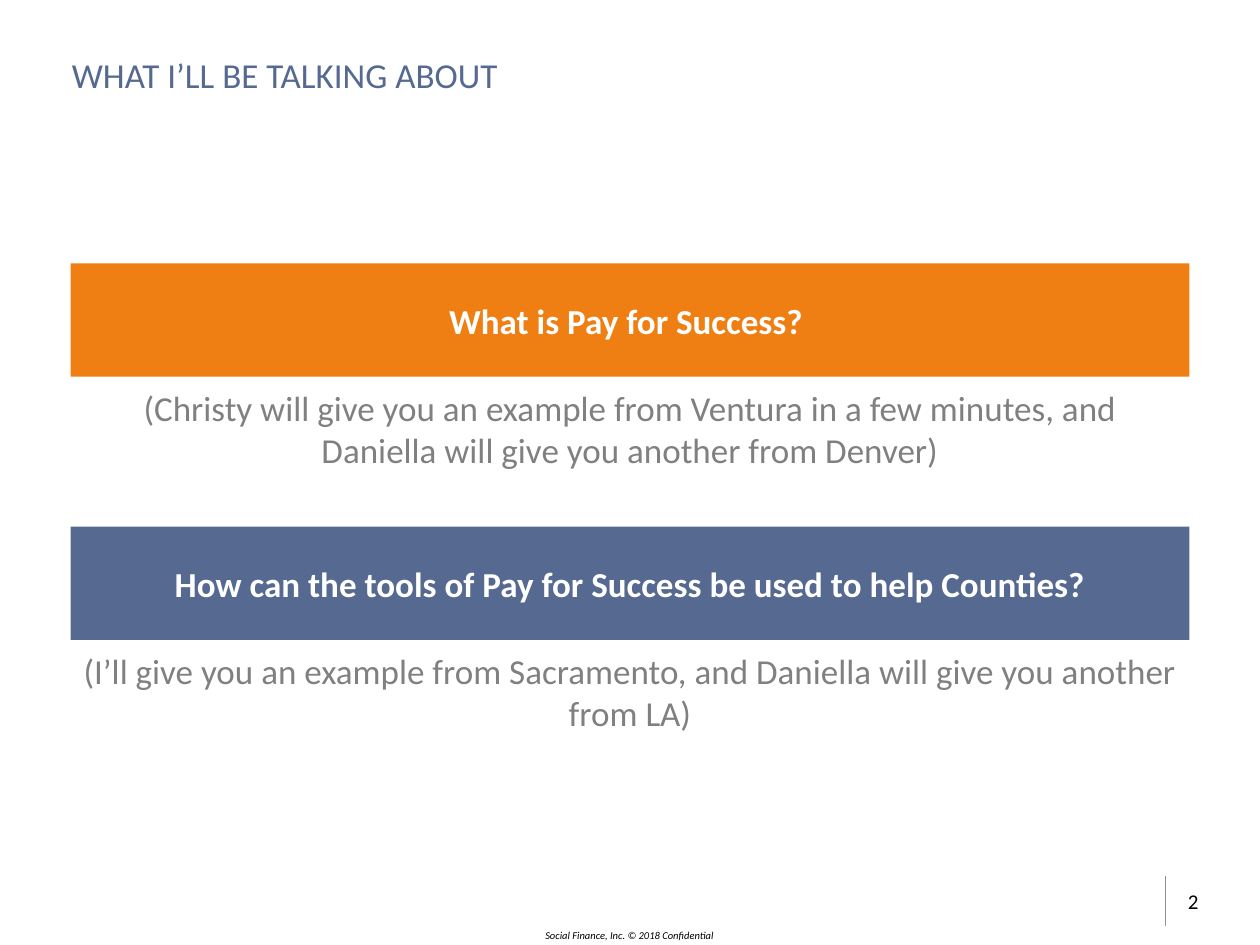
"""Build the agenda slide with two topic bars and their notes."""
from dataclasses import dataclass

import pptx
import pptx.dml.color
import pptx.enum.shapes
import pptx.enum.text
import pptx.oxml.ns
import pptx.util
from lxml import etree
from pptx.util import Inches

ALIGN = pptx.enum.text.PP_ALIGN
ANCHOR = pptx.enum.text.MSO_ANCHOR
BLUE = "556991"
ORANGE = "F07F13"
WHITE = "FFFFFF"
GRAY = "808080"
BLACK = "000000"
RULE_GRAY = "9B8F8B"

LEFT, WIDTH, HEIGHT = 0.56, 8.88, 0.9
FIRST_TOP, TOPIC_STEP, NOTE_OFFSET = 2.09, 2.09, 0.86


@dataclass
class Topic:
    heading: str
    note: str
    fill: str


@dataclass
class Style:
    size: float
    color: str
    align: ALIGN = ALIGN.CENTER
    anchor: ANCHOR = ANCHOR.MIDDLE
    bold: bool = False
    italic: bool = False
    insets: tuple = (0.1, 0.05, 0.1, 0.05)


TOPICS = [
    Topic(
        "What is Pay for Success? ",
        "(Christy will give you an example from Ventura in a few minutes, "
        "and Daniella will give you another from Denver)",
        ORANGE,
    ),
    Topic(
        "How can the tools of Pay for Success be used to help Counties?",
        "(I’ll give you an example from Sacramento, "
        "and Daniella will give you another from LA)",
        BLUE,
    ),
]

NO_INSETS = (0, 0, 0, 0)
TITLE = Style(20, BLUE, ALIGN.LEFT, insets=NO_INSETS)
HEADING = Style(20, WHITE, bold=True)
NOTE = Style(20, GRAY)
PAGE_NUMBER = Style(12, BLACK, ALIGN.LEFT, insets=(0.1, 0, 0, 0))
FOOTER = Style(6, BLACK, anchor=ANCHOR.TOP, italic=True, insets=NO_INSETS)


def rgb(value: str) -> pptx.dml.color.RGBColor:
    return pptx.dml.color.RGBColor.from_string(value)


def write(shape, text: str, style: Style) -> None:
    frame = shape.text_frame
    frame.text = text
    frame.word_wrap = True
    frame.auto_size = pptx.enum.text.MSO_AUTO_SIZE.NONE
    frame.vertical_anchor = style.anchor
    (frame.margin_left, frame.margin_top,
     frame.margin_right, frame.margin_bottom) = map(Inches, style.insets)
    para = frame.paragraphs[0]
    para.alignment = style.align
    para.font.name = "Calibri"
    para.font.size = pptx.util.Pt(style.size)
    para.font.bold = style.bold
    para.font.italic = style.italic
    para.font.color.rgb = rgb(style.color)


def add_text(page, place: tuple, text: str, style: Style) -> None:
    write(page.shapes.add_textbox(*map(Inches, place)), text, style)


def add_topic(page, topic: Topic, top: float) -> None:
    bar = page.shapes.add_shape(
        pptx.enum.shapes.MSO_SHAPE.RECTANGLE,
        *map(Inches, (LEFT, top, WIDTH, HEIGHT)),
    )
    bar.shadow.inherit = False
    bar.fill.solid()
    bar.fill.fore_color.rgb = rgb(topic.fill)
    bar.line.fill.background()
    write(bar, topic.heading, HEADING)
    add_text(page, (LEFT, top + NOTE_OFFSET, WIDTH, HEIGHT), topic.note, NOTE)


def add_title(page, text: str) -> None:
    title = page.shapes.title
    title.left, title.top, title.width, title.height = map(
        Inches, (0.57, 0.41, 8.85, 0.36))
    write(title, text, TITLE)


def add_footer(page) -> None:
    add_text(page, (9.33, 6.95, 0.67, 0.4), "2", PAGE_NUMBER)
    rule = page.shapes.add_connector(
        pptx.enum.shapes.MSO_CONNECTOR.STRAIGHT,
        *map(Inches, (9.25, 6.95, 9.25, 7.35)),
    )
    rule.line.color.rgb = rgb(RULE_GRAY)
    rule.line.width = pptx.util.Pt(0.75)
    etree.SubElement(rule._element.spPr, pptx.oxml.ns.qn("a:effectLst"))
    add_text(page, (4.09, 7.37, 1.81, 0.11),
             "Social Finance, Inc. © 2018 Confidential", FOOTER)


def main() -> None:
    deck = pptx.Presentation()
    deck.slide_width, deck.slide_height = Inches(10), Inches(7.5)
    page = deck.slides.add_slide(deck.slide_layouts.get_by_name("Title Only"))
    add_footer(page)
    add_title(page, "WHAT I’LL BE TALKING ABOUT")
    for index, topic in enumerate(TOPICS):
        add_topic(page, topic, FIRST_TOP + index * TOPIC_STEP)
    deck.save("out.pptx")


if __name__ == "__main__":
    main()
